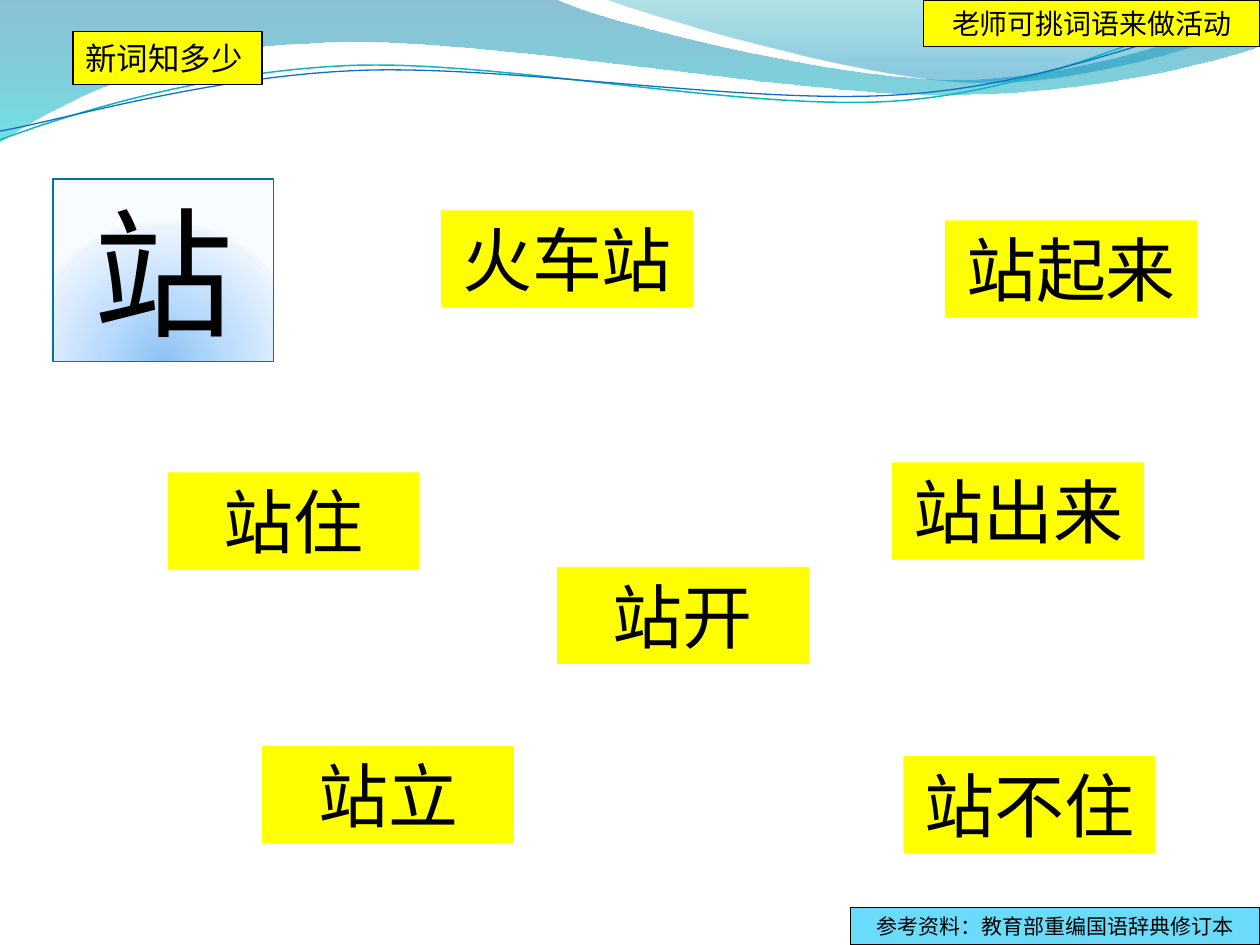
"""Build a word-game slide for the character 站, under a wave header."""
import math

from lxml import etree
from pptx import Presentation, util as u
from pptx.dml.color import RGBColor
from pptx.enum import shapes, text
from pptx.oxml import ns

FONT = "Noto Sans CJK SC"
TILT = 2.7
rgb = RGBColor.from_string


def grad(shape, stops, shade, **rect):
    shape.fill.gradient()
    root = shape.element.spPr.find(ns.qn("a:gradFill"))
    root.clear()
    items = etree.SubElement(root, ns.qn("a:gsLst"))
    for pos, color, alpha in stops:
        stop = etree.SubElement(items, ns.qn("a:gs"), pos=str(pos * 1000))
        tone = etree.SubElement(stop, ns.qn("a:srgbClr"), val=color)
        if alpha < 100:
            etree.SubElement(tone, ns.qn("a:alpha"), val=str(alpha * 1000))
    if shade == "circle":
        way = etree.SubElement(root, ns.qn("a:path"), path=shade)
        etree.SubElement(way, ns.qn("a:fillToRect"), **rect)
    else:
        etree.SubElement(root, ns.qn("a:lin"), ang=shade, scaled="0")


def box(word, x, y, w, h, size, fill="FFFF00", line=None, align="CENTER"):
    shape = slide.shapes.add_shape(
        shapes.MSO_SHAPE.RECTANGLE, *[u.Inches(n) for n in (x, y, w, h)])
    shape.shadow.inherit = False
    shape.fill.solid()
    shape.fill.fore_color.rgb = rgb(fill)
    if line:
        shape.line.color.rgb = rgb(line)
        shape.line.width = u.Pt(0.75)
    else:
        shape.line.fill.background()
    frame = shape.text_frame
    frame.word_wrap = True
    frame.vertical_anchor = text.MSO_ANCHOR.MIDDLE
    para = frame.paragraphs[0]
    para.alignment = text.PP_ALIGN[align]
    run = para.add_run()
    run.text = word
    run.font.size = u.Pt(size)
    run.font.color.rgb = rgb("000000")
    run.font.name = FONT
    etree.SubElement(run.font._element, ns.qn("a:ea"), typeface=FONT)
    return shape


prs = Presentation()
prs.slide_width, prs.slide_height = u.Inches(10), u.Inches(7.5)
slide = prs.slides.add_slide(prs.slide_layouts[6])

waves = [
    ([(0, 0), (4.4, -0.01), (4.76, 0.17, 6.64, 0.63, 7.58, 0.63),
      (8.53, 0.63, 9.58, 0.26, 10, 0.09), (10.01, 0.36),
      (9.83, 0.44, 8.7, 0.76, 7.46, 0.75), (6.22, 0.75, 3.82, 0.28, 2.57, 0.34),
      (1.29, 0.36, 0.46, 0.83, -0.01, 1.13), (0, 0)],
     [(0, "0074A1", 45), (100, "00C6CF", 55)], None, None),
    ([(4.79, -0.01), (5.09, 0.11, 6.82, 0.62, 7.69, 0.65),
      (8.56, 0.69, 9.61, 0.32, 10, 0.21), (10, 0), (4.79, -0.01)],
     [(0, "00A1A9", 30), (80, "008BBF", 45)], None, None),
    ([(0, 1.11), (0.48, 0.93, 1.58, 0.57, 2.77, 0.52),
      (3.95, 0.47, 5.93, 0.89, 7.13, 0.8), (8.33, 0.71, 9.38, 0.15, 9.98, -0.02)],
     None, ("0AB8BF", 0.85), (4.99, 0.57)),
    ([(0, 1.04), (0.47, 0.96, 1.64, 0.61, 2.83, 0.56),
      (4.03, 0.51, 5.97, 0.84, 7.17, 0.75), (8.36, 0.67, 9.41, 0.21, 10, 0.06)],
     None, ("0F6FC6", 0.75), (5, 0.59)),
]
cos, sin = math.cos(math.radians(TILT)), math.sin(math.radians(TILT))
for steps, stops, line, mid in waves:
    dots = [step[i:i + 2] for step in steps for i in range(0, len(step), 2)]
    if mid:
        gaps = [(x - mid[0], y - mid[1]) for x, y in dots]
        dots = [(mid[0] + x * cos - y * sin, mid[1] + x * sin + y * cos)
                for x, y in gaps]
    dots = [(u.Inches(x), u.Inches(y)) for x, y in dots]
    pen = slide.shapes.build_freeform(*dots[0])
    pen.add_line_segments(dots[1:], close=bool(stops))
    wave = pen.convert_to_shape()
    wave.shadow.inherit = False
    legs = iter(list(wave.element.spPr.iter(ns.qn("a:lnTo"))))
    for step in steps[1:]:
        leg = next(legs)
        if len(step) == 6:
            leg.tag = ns.qn("a:cubicBezTo")
            for _ in range(2):
                more = next(legs)
                leg.append(more[0])
                more.getparent().remove(more)
    if stops:
        grad(wave, stops, "5400000")
        wave.line.fill.background()
    else:
        wave.fill.background()
        wave.line.color.rgb = rgb(line[0])
        wave.line.width = u.Pt(line[1])
        wave.rotation = -TILT

for word, x, y in [("站开", 4.42, 4.5), ("站住", 1.33, 3.75), ("站出来", 7.08, 3.67),
                   ("站立", 2.08, 5.92), ("站不住", 7.17, 6), ("火车站", 3.5, 1.67)]:
    box(word, x, y, 2, 0.77, 40)

key = box("站", 0.42, 1.42, 1.75, 1.45, 80, line="0074A1")
grad(key, [(0, "8BC2F1", 100), (43, "B9DBFD", 100), (93, "EAF3FE", 100),
           (100, "F8FBFF", 100)], "circle", l="50000", t="130000", r="50000", b="-30000")

box("站起来", 7.5, 1.75, 2, 0.77, 40)
box("新词知多少", 0.58, 0.25, 1.5, 0.42, 18, line="000000", align="LEFT")
box("参考资料：教育部重编国语辞典修订本", 6.75, 7.2, 3.25, 0.3, 12, "6BDBFA", "000000")
box("老师可挑词语来做活动", 7.33, 0, 2.67, 0.37, 16, line="000000")

prs.save("out.pptx")
